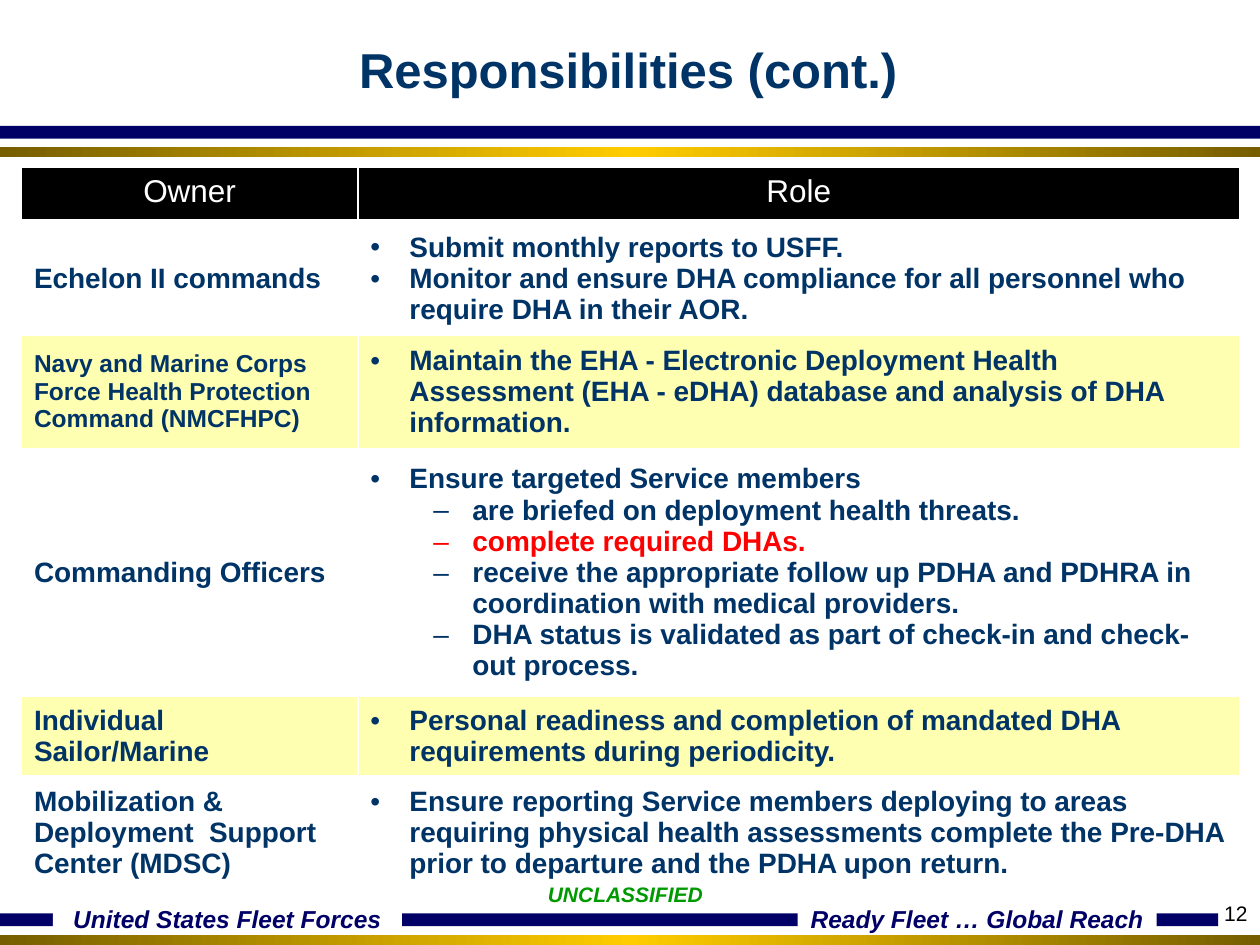
"""Build the Responsibilities (cont.) slide with its table of owners and roles."""
from copy import deepcopy

from lxml import etree
from pptx import Presentation
from pptx.dml.color import RGBColor
from pptx.enum import shapes, text
from pptx.oxml.ns import qn
from pptx.util import Inches, Pt

NAVY, BLUE, WHITE, RED = "000066", "003366", "FFFFFF", "FF0000"
CENTER, LEFT, RIGHT = text.PP_ALIGN.CENTER, text.PP_ALIGN.LEFT, text.PP_ALIGN.RIGHT
MIDDLE, TOP = text.MSO_ANCHOR.MIDDLE, text.MSO_ANCHOR.TOP
color = RGBColor.from_string


def write(paragraph, words, size=16, ink=BLUE, bold=True, italic=False, align=LEFT, bullet=None, indent=0.31):
    paragraph.alignment = align
    if bullet:
        props = paragraph._p.get_or_add_pPr()
        props.set("marL", str(Inches(indent)))
        props.set("indent", str(-Inches(0.31)))
        etree.SubElement(props, qn("a:buFont"), typeface="Arial")
        etree.SubElement(props, qn("a:buChar"), char=bullet)
    run = paragraph.add_run()
    run.text = words
    run.font.name, run.font.size = "Arial", Pt(size)
    run.font.bold, run.font.italic = bold, italic
    run.font.color.rgb = color(ink)


def add_block(left, top, width, height, fill):
    block = slide.shapes.add_shape(shapes.MSO_SHAPE.RECTANGLE, *map(Inches, (left, top, width, height)))
    block.shadow.inherit = False
    block.line.fill.background()
    if fill == "gold":
        block.fill.gradient()
        block.fill.gradient_angle = 0
        first = block.fill._fill._gradFill.find(qn("a:gsLst"))[0]
        first.addnext(deepcopy(first))
        for stop, (position, shade) in zip(block.fill.gradient_stops, [(0, "765E00"), (0.5, "FFCC00"), (1, "765E00")]):
            stop.position = position
            stop.color.rgb = color(shade)
    else:
        block.fill.solid()
        block.fill.fore_color.rgb = color(fill)
    frame = block.text_frame
    frame.vertical_anchor = MIDDLE
    frame.margin_top = frame.margin_bottom = 0
    return frame


deck = Presentation()
deck.slide_width, deck.slide_height = Inches(10), Inches(7.5)
slide = deck.slides.add_slide(deck.slide_layouts[5])

add_block(0, 7.25, 9.67, 0.1, NAVY)
for left, width, motto in [(0.42, 2.77, "United States Fleet Forces"), (6.33, 2.85, "Ready Fleet … Global Reach")]:
    label = add_block(left, 7.18, width, 0.23, WHITE)
    write(label.paragraphs[0], motto, size=14, ink=NAVY, italic=True, align=CENTER)
add_block(0, 7.42, 10, 0.08, "gold")
add_block(0, 1, 10, 0.1, NAVY)
add_block(0, 1.17, 10, 0.08, "gold")

title = slide.shapes.title
title.left, title.top, title.width, title.height = map(Inches, (1.69, 0.31, 6.59, 0.47))
heading = title.text_frame
heading.margin_left = heading.margin_right = Inches(0.05)
heading.margin_top = heading.margin_bottom = 0
heading.vertical_anchor = MIDDLE
write(heading.paragraphs[0], "Responsibilities (cont.)", size=28, align=CENTER)

duties = [
    (0.9, "Echelon II commands", 16, [
        "Submit monthly reports to USFF.",
        "Monitor and ensure DHA compliance for all personnel who require DHA in their AOR."], []),
    (0.9, "Navy and Marine Corps Force Health Protection Command (NMCFHPC)", 14, [
        "Maintain the EHA - Electronic Deployment Health Assessment (EHA - eDHA) database "
        "and analysis of DHA information."], []),
    (1.97, "Commanding Officers", 16, ["Ensure targeted Service members"], [
        ("are briefed on deployment health threats.", BLUE),
        ("complete required DHAs.", RED),
        ("receive the appropriate follow up PDHA and PDHRA in coordination with medical providers.", BLUE),
        ("DHA status is validated as part of check-in and check-out process.", BLUE)]),
    (0.63, "Individual Sailor/Marine", 16, [
        "Personal readiness and completion of mandated DHA requirements during periodicity."], []),
    (0.9, "Mobilization & Deployment  Support Center (MDSC)", 16, [
        "Ensure reporting Service members deploying to areas requiring physical health assessments "
        "complete the Pre-DHA prior to departure and the PDHA upon return."], []),
]
heights = [0.43] + [duty[0] for duty in duties]
roles = slide.shapes.add_table(
    len(heights), 2, Inches(0.17), Inches(1.33), Inches(9.67), Inches(sum(heights))).table
roles.columns[0].width, roles.columns[1].width = Inches(2.67), Inches(7)

for index, height in enumerate(heights):
    roles.rows[index].height = Inches(height)
    for cell in roles.rows[index].cells:
        cell.vertical_anchor = MIDDLE if index else TOP
        props = cell._tc.get_or_add_tcPr()
        for side in ("lnL", "lnR", "lnT", "lnB"):
            weight = 3 if (index, side) in [(0, "lnB"), (1, "lnT")] else 1
            border = etree.SubElement(props, qn(f"a:{side}"), w=str(Pt(weight)))
            paint = etree.SubElement(border, qn("a:solidFill"))
            etree.SubElement(paint, qn("a:srgbClr"), val=WHITE)
        cell.fill.solid()
        cell.fill.fore_color.rgb = color("000000" if index == 0 else WHITE if index % 2 else "FFFFB2")

for cell, caption in zip(roles.rows[0].cells, ["Owner", "Role"]):
    write(cell.text_frame.paragraphs[0], caption, size=18, ink=WHITE, bold=False, align=CENTER)

for index, (_, owner, size, tasks, details) in enumerate(duties, 1):
    write(roles.cell(index, 0).text_frame.paragraphs[0], owner, size=size)
    role = roles.cell(index, 1).text_frame
    for number, task in enumerate(tasks):
        write(role.add_paragraph() if number else role.paragraphs[0], task, bullet="•")
    for detail, ink in details:
        paragraph = role.add_paragraph()
        paragraph.level = 1
        write(paragraph, detail, ink=ink, bullet="‒", indent=0.81)

page = add_block(9.67, 7.08, 0.33, 0.33, WHITE)
page.word_wrap = False
write(page.paragraphs[0], "12", size=12, ink="000000", bold=False, align=RIGHT)

marking = slide.shapes.add_textbox(Inches(4.25), Inches(6.95), Inches(1.44), Inches(0.3)).text_frame
marking.word_wrap = False
write(marking.paragraphs[0], "UNCLASSIFIED", size=12, ink="009900", italic=True)

deck.save("out.pptx")
